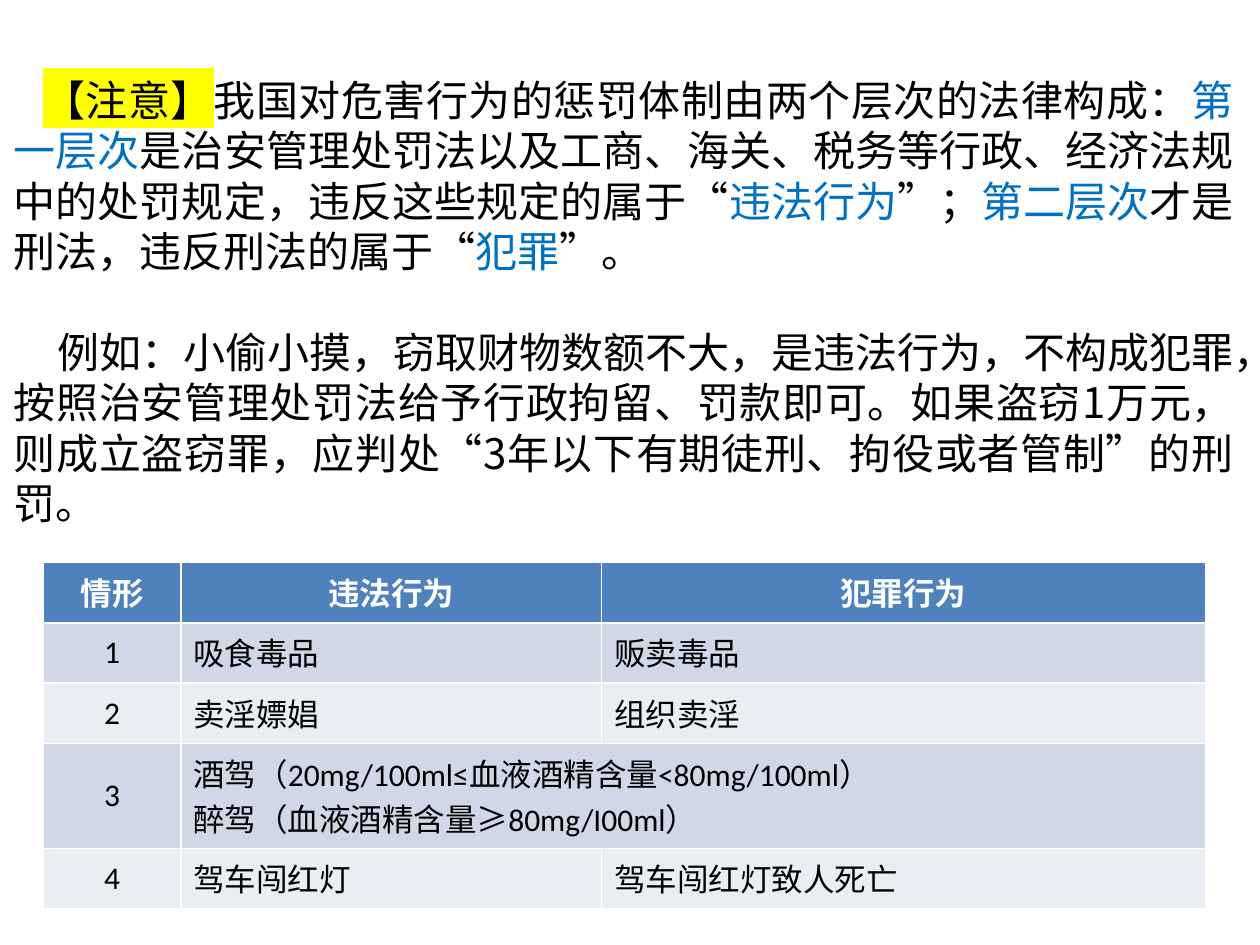
"""Builds a slide on unlawful acts versus crimes, with a comparison table."""
from lxml import etree
from pptx import Presentation
from pptx.dml.color import RGBColor
from pptx.enum.text import MSO_ANCHOR, MSO_AUTO_SIZE, PP_ALIGN
from pptx.oxml.ns import qn
from pptx.util import Pt

CENTER, LEFT, JUSTIFY = PP_ALIGN.CENTER, PP_ALIGN.LEFT, PP_ALIGN.JUSTIFY
TOP, MIDDLE = MSO_ANCHOR.TOP, MSO_ANCHOR.MIDDLE
FIT = MSO_AUTO_SIZE.SHAPE_TO_FIT_TEXT

COLORS = {"text": "000000", "key": "0070C0", "mark": "FFFF00", "white": "FFFFFF",
          "header": "4F81BD", "odd": "D0D8E8", "even": "E9EDF4"}
BODY_FONT, TABLE_FONT = "Noto Sans CJK SC", "Calibri"
LINE = 28.8

PARAGRAPHS = [
    {"indent": 17, "before": 0, "runs": [
        ("【注意】", "mark"),
        ("我国对危害行为的惩罚体制由两个层次的法律构成：", "text"),
        ("第一层次", "key"),
        ("是治安管理处罚法以及工商、海关、税务等行政、经济法规中的处罚规定，违反这些规定的属于“", "text"),
        ("违法行为", "key"),
        ("”；", "text"),
        ("第二层次", "key"),
        ("才是刑法，违反刑法的属于“", "text"),
        ("犯罪", "key"),
        ("”。", "text")]},
    {"indent": 25, "before": LINE, "runs": [
        ("例如：小偷小摸，窃取财物数额不大，是违法行为，不构成犯罪，按照治安管理处罚法给予行政拘留、"
         "罚款即可。如果盗窃1万元，则成立盗窃罪，应判处“3年以下有期徒刑、拘役或者管制”的刑罚。", "text")]},
]

ROWS = [
    ("情形", "违法行为", "犯罪行为"),
    ("1", "吸食毒品", "贩卖毒品"),
    ("2", "卖淫嫖娼", "组织卖淫"),
    ("3", "酒驾（20mg/100ml≤血液酒精含量<80mg/100ml）\n醉驾（血液酒精含量≥80mg/I00ml）", None),
    ("4", "驾车闯红灯", "驾车闯红灯致人死亡"),
]
COL_WIDTHS = [78.5, 240.5, 345]
ROW_HEIGHTS = [34.5, 34.5, 34.5, 60, 34.5]


def style_run(r, font, size, color, bold=False):
    for name, value in {"name": font, "size": Pt(size), "bold": bold}.items():
        setattr(r.font, name, value)
    r.font.color.rgb = RGBColor.from_string(COLORS[color])


def add_body_run(p, text, role):
    r = p.add_run()
    r.text = text
    style_run(r, BODY_FONT, 24, "key" if role == "key" else "text")
    rPr = r.font._element
    etree.SubElement(rPr, qn("a:ea"), typeface=BODY_FONT)
    if role == "mark":
        highlight = etree.Element(qn("a:highlight"))
        etree.SubElement(highlight, qn("a:srgbClr"), val=COLORS["mark"])
        rPr.find(qn("a:solidFill")).addnext(highlight)


def add_body(s):
    tf = s.shapes.add_textbox(Pt(0.7), Pt(37.5), Pt(711.4), Pt(269.3)).text_frame
    for name, value in {"word_wrap": True, "auto_size": FIT,
                        "margin_top": Pt(5), "margin_bottom": Pt(5)}.items():
        setattr(tf, name, value)
    for i, item in enumerate(PARAGRAPHS):
        p = tf.add_paragraph() if i else tf.paragraphs[0]
        for name, value in {"alignment": JUSTIFY, "line_spacing": Pt(LINE),
                            "space_before": Pt(item["before"])}.items():
            setattr(p, name, value)
        p._p.get_or_add_pPr().set("indent", str(Pt(item["indent"])))
        for text, role in item["runs"]:
            add_body_run(p, text, role)


def fill_cell(cell, text, row, col):
    header = row == 0
    fill = "header" if header else "odd" if row % 2 else "even"
    cell.fill.solid()
    cell.fill.fore_color.rgb = RGBColor.from_string(COLORS[fill])
    if text is None:
        return
    cell.text = text
    cell.vertical_anchor = MIDDLE if col == 0 and not header else TOP
    for p in cell.text_frame.paragraphs:
        p.alignment = CENTER if header or col == 0 else LEFT
        for r in p.runs:
            style_run(r, TABLE_FONT, 18, "white" if header else "text", header)


def add_comparison(s):
    table = s.shapes.add_table(len(ROWS), len(COL_WIDTHS), Pt(24.8), Pt(321.4),
                               Pt(sum(COL_WIDTHS)), Pt(sum(ROW_HEIGHTS))).table
    for column, width in zip(table.columns, COL_WIDTHS):
        column.width = Pt(width)
    for i, (texts, height) in enumerate(zip(ROWS, ROW_HEIGHTS)):
        table.rows[i].height = Pt(height)
        for j, text in enumerate(texts):
            fill_cell(table.cell(i, j), text, i, j)
            if text is None:
                table.cell(i, j - 1).merge(table.cell(i, j))


def main():
    prs = Presentation()
    prs.slide_width, prs.slide_height = Pt(720), Pt(540)
    s = prs.slides.add_slide(prs.slide_layouts[6])
    add_body(s)
    add_comparison(s)
    prs.save("out.pptx")


if __name__ == "__main__":
    main()
